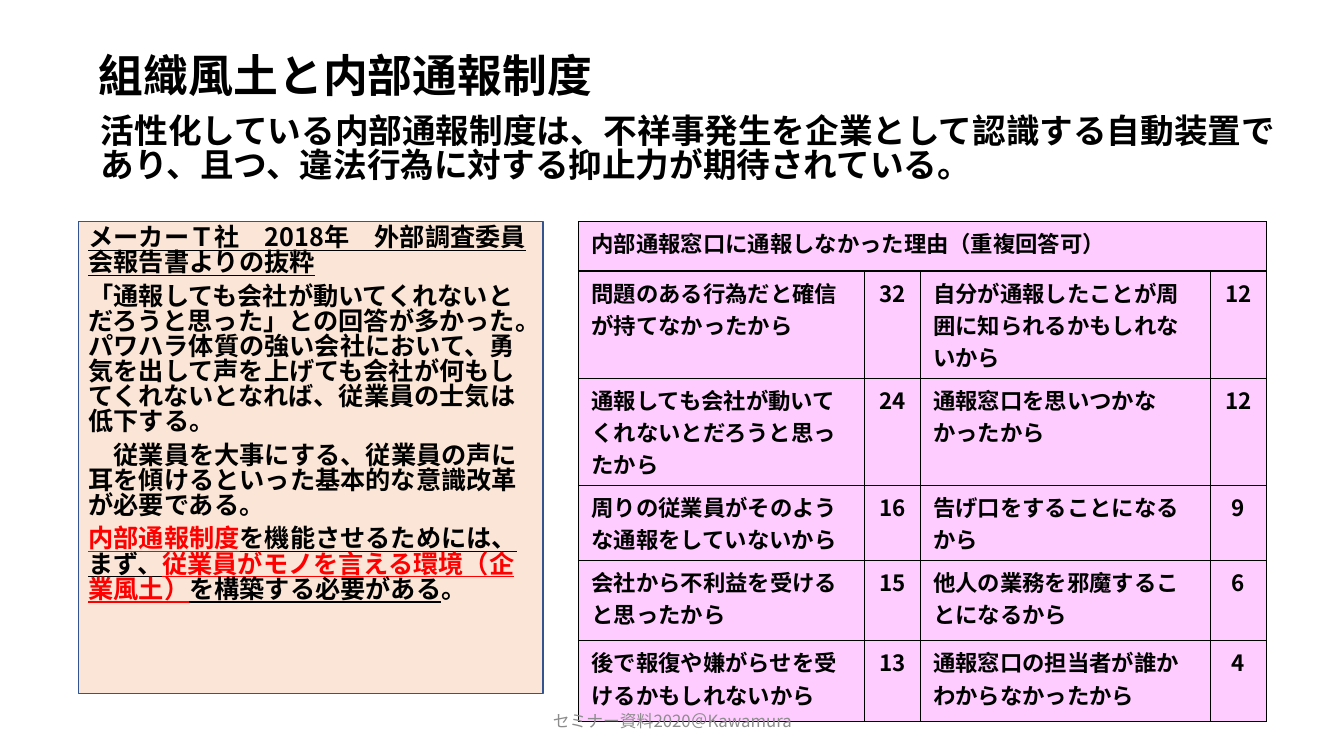
from dataclasses import dataclass

from lxml.etree import SubElement
from pptx import Presentation
from pptx.dml.color import RGBColor as RGB
from pptx.enum.shapes import MSO_SHAPE as Shape
from pptx.enum.text import MSO_ANCHOR as Anchor, MSO_AUTO_SIZE as AutoSize, PP_ALIGN as Align
from pptx.oxml import parse_xml
from pptx.oxml.ns import nsdecls, qn
from pptx.util import Cm, Pt


@dataclass(frozen=True)
class Theme:
    """Colours, fonts and type sizes of the slide."""
    ink: str = "000000"
    accent: str = "FF0000"
    muted: str = "8C8C8C"
    paper: str = "FFFFFF"
    peach: str = "FBE5D6"
    frame: str = "325491"
    pink: str = "FFCCFF"
    latin: str = "Arial"
    japanese: str = "Noto Sans CJK JP"
    title: int = 32
    lead: int = 24
    report: int = 18
    cell: int = 16
    footer: int = 12


T = Theme()
TITLE = "組織風土と内部通報制度"
LEAD = ("活性化している内部通報制度は、不祥事発生を企業として認識する自動装置であり、"
        "且つ、違法行為に対する抑止力が期待されている。")
REPORT = [
    [("メーカーＴ社　2018年　外部調査委員会報告書よりの抜粋", T.ink, True)],
    [("「通報しても会社が動いてくれないとだろうと思った」との回答が多かった。"
      "パワハラ体質の強い会社において、勇気を出して声を上げても会社が何もしてくれないとなれば、"
      "従業員の士気は低下する。", T.ink, False)],
    [("　従業員を大事にする、従業員の声に耳を傾けるといった基本的な意識改革が必要である。",
      T.ink, False)],
    [("内部通報制度", T.accent, True),
     ("を機能させるためには、まず、", T.ink, True),
     ("従業員がモノを言える環境（企業風土）", T.accent, True),
     ("を構築する必要がある", T.ink, True),
     ("。", T.ink, False)],
]
REASONS_TITLE = "内部通報窓口に通報しなかった理由（重複回答可）"
REASONS = [
    ("問題のある行為だと確信が持てなかったから", "32",
     "自分が通報したことが周囲に知られるかもしれないから", "12"),
    ("通報しても会社が動いてくれないとだろうと思ったから", "24",
     "通報窓口を思いつかなかったから", "12"),
    ("周りの従業員がそのような通報をしていないから", "16",
     "告げ口をすることになるから", "9"),
    ("会社から不利益を受けると思ったから", "15",
     "他人の業務を邪魔することになるから", "6"),
    ("後で報復や嫌がらせを受けるかもしれないから", "13",
     "通報窓口の担当者が誰かわからなかったから", "4"),
]
COLUMNS = (7.21, 1.4, 7.32, 1.4)
ROWS = (1.24, 2.26, 2.49, 1.8, 2.03, 2.03)
FOOTER = "セミナー資料2020＠Kawamura"


def place(sp, left, top, width, height):
    """Move and size a shape in centimetres."""
    sp.left, sp.top, sp.width, sp.height = map(Cm, (left, top, width, height))


def paint(target, color):
    """Give a shape or cell a solid fill."""
    target.fill.solid()
    target.fill.fore_color.rgb = RGB.from_string(color)


def setup_frame(sp, anchor):
    """Wrap the text of a shape at a fixed size and return its frame."""
    tf = sp.text_frame
    tf.word_wrap = True
    tf.auto_size = AutoSize.NONE
    tf.vertical_anchor = anchor
    return tf


def set_paragraph(p, align=Align.LEFT, spacing=1.0, after=0):
    """Set alignment and spacing of a paragraph."""
    p.alignment = align
    p.line_spacing = spacing
    p.space_before = Pt(0)
    p.space_after = Pt(after)


def add_run(p, text, size, color=T.ink, font=T.japanese, bold=True, underline=False):
    """Append a formatted run to a paragraph."""
    r = p.add_run()
    r.text = text
    r.font.size = Pt(size)
    r.font.name = font
    r.font.bold = bold
    r.font.underline = underline
    r.font.color.rgb = RGB.from_string(color)
    SubElement(r.font._element, qn("a:ea"), typeface=T.japanese)


def add_title(s):
    """Fill the title placeholder."""
    sp = s.shapes.title
    place(sp, 2.24, 1.19, 14.55, 1.55)
    p = setup_frame(sp, Anchor.MIDDLE).paragraphs[0]
    set_paragraph(p, spacing=0.9)
    add_run(p, TITLE, T.title, font=T.latin)


def add_lead(s):
    """Fill the body placeholder with the unbulleted key message."""
    sp = s.placeholders[1]
    place(sp, 2.29, 2.82, 30.56, 2.21)
    paint(sp, T.paper)
    p = setup_frame(sp, Anchor.TOP).paragraphs[0]
    set_paragraph(p, spacing=0.83, after=6)
    pPr = p._p.get_or_add_pPr()
    pPr.set("marL", "0")
    pPr.set("indent", "0")
    SubElement(pPr, qn("a:buNone"))
    add_run(p, LEAD, T.lead, font=T.latin)


def add_report(s):
    """Draw the framed box with the report excerpt."""
    sp = s.shapes.add_shape(Shape.RECTANGLE, Cm(1.98), Cm(5.59), Cm(11.71), Cm(11.89))
    sp.shadow.inherit = False
    paint(sp, T.peach)
    sp.line.color.rgb = RGB.from_string(T.frame)
    sp.line.width = Pt(1)
    tf = setup_frame(sp, Anchor.TOP)
    for i, runs in enumerate(REPORT):
        p = tf.add_paragraph() if i else tf.paragraphs[0]
        set_paragraph(p, spacing=0.83, after=6)
        for text, color, underline in runs:
            add_run(p, text, T.report, color, underline=underline)


def style_cell(cell):
    """Set fill, margins and borders of a table cell."""
    paint(cell, T.pink)
    cell.margin_left = cell.margin_right = Cm(0.33)
    cell.margin_top = cell.margin_bottom = Cm(0.13)
    tcPr = cell._tc.get_or_add_tcPr()
    for i, side in enumerate("LRTB"):
        tcPr.insert(i, parse_xml(
            f'<a:ln{side} {nsdecls("a")} w="{Pt(1)}"><a:solidFill>'
            f'<a:srgbClr val="{T.ink}"/></a:solidFill></a:ln{side}>'))


def add_reasons(s):
    """Draw the table of reasons and counts."""
    grid = s.shapes.add_table(len(ROWS), len(COLUMNS), Cm(14.58), Cm(5.59),
                              Cm(sum(COLUMNS)), Cm(sum(ROWS)))
    table = grid.table
    table.first_row = table.horz_banding = False
    for column, width in zip(table.columns, COLUMNS):
        column.width = Cm(width)
    for row, height in zip(table.rows, ROWS):
        row.height = Cm(height)
    for cell in (c for row in table.rows for c in row.cells):
        style_cell(cell)
    table.cell(0, 0).merge(table.cell(0, len(COLUMNS) - 1))
    for i, texts in enumerate([(REASONS_TITLE,), *REASONS]):
        for j, text in enumerate(texts):
            p = table.cell(i, j).text_frame.paragraphs[0]
            set_paragraph(p, Align.CENTER if j % 2 else Align.LEFT)
            add_run(p, text, T.cell)


def add_footer(s):
    """Write the seminar footer."""
    sp = s.shapes.add_textbox(Cm(11.23), Cm(17.65), Cm(11.43), Cm(1.02))
    p = setup_frame(sp, Anchor.MIDDLE).paragraphs[0]
    set_paragraph(p, Align.CENTER)
    add_run(p, FOOTER, T.footer, T.muted, bold=False)


def main():
    """Build the slide and save it."""
    prs = Presentation()
    prs.slide_width, prs.slide_height = Cm(33.87), Cm(19.05)
    s = prs.slides.add_slide(prs.slide_layouts[1])
    for add_part in (add_title, add_report, add_lead, add_reasons, add_footer):
        add_part(s)
    prs.save("out.pptx")


if __name__ == "__main__":
    main()
